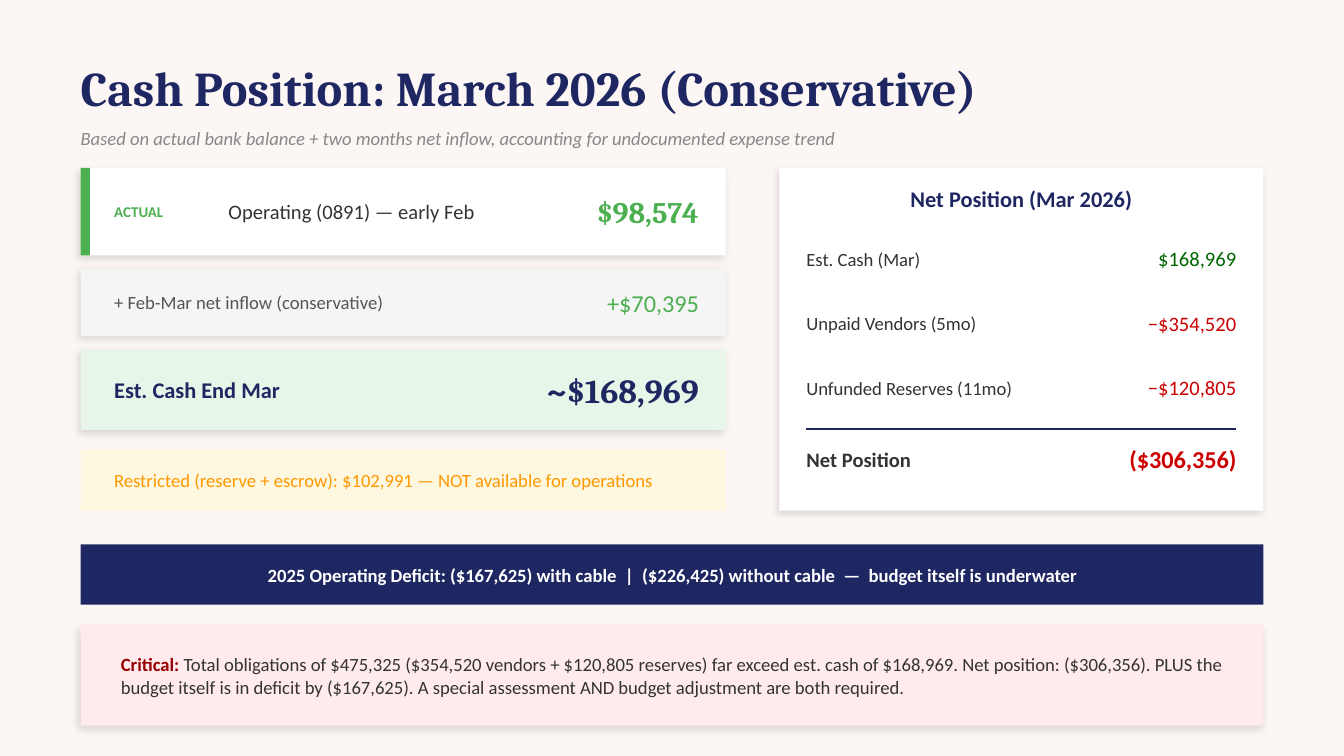
from dataclasses import dataclass

from lxml.etree import SubElement
from pptx import Presentation
from pptx.dml.color import RGBColor
from pptx.enum.shapes import MSO_CONNECTOR, MSO_SHAPE
from pptx.enum.text import MSO_ANCHOR as Anchor, MSO_AUTO_SIZE as AutoSize, PP_ALIGN as Align
from pptx.oxml.ns import qn
from pptx.util import Pt


@dataclass(frozen=True)
class Theme:
    """Colours, fonts and type sizes of the slide."""
    page: str = "FCF6F5"
    navy: str = "1E2761"
    white: str = "FFFFFF"
    grey: str = "F5F5F5"
    mint: str = "E8F5E9"
    cream: str = "FFF8E1"
    pink: str = "FFEBEE"
    green: str = "4CAF50"
    dark_green: str = "006600"
    orange: str = "FF9800"
    red: str = "CC0000"
    dark_red: str = "990000"
    ink: str = "333333"
    soft: str = "555555"
    muted: str = "888888"
    head: str = "Cambria"
    body: str = "Calibri"
    title: int = 26
    total: int = 18
    balance: int = 16
    amount: int = 13
    label: int = 12
    row: int = 11
    text: int = 10
    tag: int = 8


T = Theme()


def style(font, size, color, bold=False, italic=False, name=T.body):
    """Set every property of a font."""
    font.name, font.size, font.bold, font.italic = name, Pt(size), bold, italic
    font.color.rgb = RGBColor.from_string(color)


def set_frame(tf):
    """Give a text frame no margins, wrapping and middle anchoring."""
    tf.margin_left = tf.margin_top = tf.margin_right = tf.margin_bottom = 0
    tf.word_wrap, tf.auto_size, tf.vertical_anchor = True, AutoSize.NONE, Anchor.MIDDLE


def add_text(s, box, text, size, color, align=Align.LEFT, **font):
    """Add one paragraph of text and return it."""
    tf = s.shapes.add_textbox(*map(Pt, box)).text_frame
    set_frame(tf)
    p = tf.paragraphs[0]
    p.text, p.alignment = text, align
    style(p.font, size, color, **font)
    return p


def add_panel(s, box, color, shadow=False):
    """Add a filled rectangle, with a soft shadow if asked."""
    sp = s.shapes.add_shape(MSO_SHAPE.RECTANGLE, *map(Pt, box))
    sp.fill.solid()
    sp.fill.fore_color.rgb = RGBColor.from_string(color)
    sp.line.fill.background()
    sp.shadow.inherit = False
    if shadow:
        effects = sp.element.spPr.find(qn("a:effectLst"))
        outer = SubElement(effects, qn("a:outerShdw"), blurRad=str(Pt(4)), dist=str(Pt(2)),
                           dir=str(135 * 60000), algn="bl", rotWithShape="0")
        black = SubElement(outer, qn("a:srgbClr"), val="000000")
        SubElement(black, qn("a:alpha"), val="12000")


def add_header(s, box):
    """Place the title and the subtitle below it."""
    x, y, w, h = box
    title = s.shapes.title
    title.left, title.top, title.width, title.height = Pt(x), Pt(y), Pt(w), Pt(50.4)
    set_frame(title.text_frame)
    p = title.text_frame.paragraphs[0]
    p.text, p.alignment = "Cash Position: March 2026 (Conservative)", Align.LEFT
    style(p.font, T.title, T.navy, bold=True, name=T.head)
    add_text(s, (x, y + h - 18, w, 18),
             "Based on actual bank balance + two months net inflow, "
             "accounting for undocumented expense trend", T.text, T.muted, italic=True)


def add_amount_card(s, box, fill, label, amount, label_font, amount_font, indent=18):
    """Place a card with a label at the left and an amount at the right."""
    x, y, w, h = box
    add_panel(s, box, fill, shadow=True)
    add_text(s, (x + indent, y, 180, h), label, **label_font)
    add_text(s, (x + w - 158.4, y, 144, h), amount, align=Align.RIGHT, **amount_font)


def add_cash_column(s, box):
    """Place the three cash cards and the note on restricted funds."""
    x, y, w, h = box
    add_amount_card(s, (x, y, w, 46.8), T.white, "Operating (0891) — early Feb", "$98,574",
                    dict(size=T.row, color=T.ink),
                    dict(size=T.balance, color=T.green, bold=True, name=T.head), indent=79.2)
    add_panel(s, (x, y, 5.04, 46.8), T.green)
    add_text(s, (x + 18, y, 60, 46.8), "ACTUAL", T.tag, T.green, bold=True)
    add_amount_card(s, (x, y + 54, w, 36), T.grey,
                    "+ Feb-Mar net inflow (conservative)", "+$70,395",
                    dict(size=T.text, color=T.soft), dict(size=T.amount, color=T.green))
    add_amount_card(s, (x, y + 97.2, w, 43.2), T.mint, "Est. Cash End Mar", "~$168,969",
                    dict(size=T.label, color=T.navy, bold=True),
                    dict(size=T.total, color=T.navy, bold=True, name=T.head))
    note_y = y + h - 32.4
    add_panel(s, (x, note_y, w, 32.4), T.cream)
    add_text(s, (x + 18, note_y, w - 28.8, 32.4),
             "Restricted (reserve + escrow): $102,991 — NOT available for operations",
             T.text, T.orange)


def add_net_position(s, box):
    """Place the net position panel with its rows, rule and total."""
    x, y, w, h = box
    pad, row_h, pitch = 14.4, 25.2, 34.56
    add_panel(s, box, T.white, shadow=True)
    add_text(s, (x, y + 3.6, w, row_h), "Net Position (Mar 2026)", T.label, T.navy,
             Align.CENTER, bold=True)
    first, rule_y = y + 36, y + 36 + 3 * pitch
    rows = [
        (first, "Est. Cash (Mar)", "$168,969", T.text, T.row, T.dark_green, False),
        (first + pitch, "Unpaid Vendors (5mo)", "−$354,520", T.text, T.row, T.red, False),
        (first + 2 * pitch, "Unfunded Reserves (11mo)", "−$120,805", T.text, T.row, T.red, False),
        (rule_y + 3.6, "Net Position", "($306,356)", T.row, T.amount, T.red, True),
    ]
    for top, label, amount, label_size, amount_size, color, bold in rows:
        add_text(s, (x + pad, top, 144, row_h), label, label_size, T.ink, bold=bold)
        add_text(s, (x + w - pad - 100.8, top, 100.8, row_h), amount, amount_size, color,
                 Align.RIGHT, bold=bold)
    rule = s.shapes.add_connector(MSO_CONNECTOR.STRAIGHT, Pt(x + pad), Pt(rule_y),
                                  Pt(x + w - pad), Pt(rule_y))
    rule.line.color.rgb = RGBColor.from_string(T.navy)
    rule.line.width = Pt(1)
    SubElement(rule.element.spPr, qn("a:effectLst"))


def add_deficit_banner(s, box):
    """Place the navy banner on the operating deficit."""
    add_panel(s, box, T.navy)
    add_text(s, box, "2025 Operating Deficit: ($167,625) with cable  |  ($226,425) without cable"
             "  —  budget itself is underwater", T.text, T.white, Align.CENTER, bold=True)


def add_critical_note(s, box):
    """Place the closing warning with its bold lead-in."""
    x, y, w, h = box
    add_panel(s, box, T.pink, shadow=True)
    p = add_text(s, (x + 21.6, y + 3.6, w - 43.2, h - 7.2), "Critical: ", T.text, T.ink)
    style(p.runs[0].font, T.text, T.dark_red, bold=True)
    r = p.add_run()
    r.text = ("Total obligations of $475,325 ($354,520 vendors + $120,805 reserves) far exceed "
              "est. cash of $168,969. Net position: ($306,356). PLUS the budget itself is in "
              "deficit by ($167,625). A special assessment AND budget adjustment are both required.")


def main():
    """Build the slide and save it."""
    prs = Presentation()
    prs.slide_width, prs.slide_height = Pt(720), Pt(405)
    s = prs.slides.add_slide(prs.slide_layouts[5])
    s.background.fill.solid()
    s.background.fill.fore_color.rgb = RGBColor.from_string(T.page)
    left, width = 43.2, 633.6
    add_header(s, (left, 21.6, width, 61.2))
    add_cash_column(s, (left, 90, 345.6, 183.6))
    add_net_position(s, (417.6, 90, 259.2, 183.6))
    add_deficit_banner(s, (left, 291.6, width, 32.4))
    add_critical_note(s, (left, 334.8, width, 54))
    prs.save("out.pptx")


if __name__ == "__main__":
    main()
